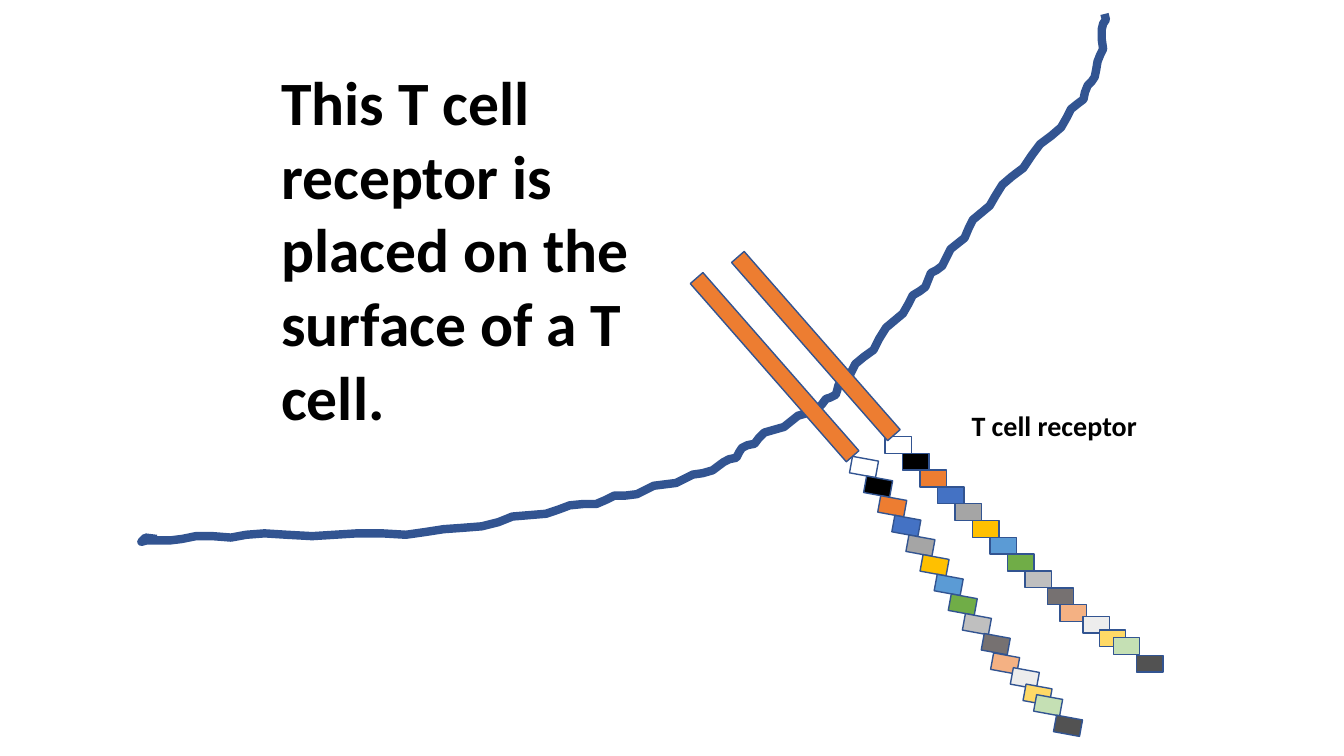
import math

from pptx import Presentation
from pptx import util as u
from pptx.dml.color import RGBColor
from pptx.enum import shapes, text

COLORS = {
    "outline": "325491", "ink": "000000", "white": "FFFFFF", "orange": "ED7D31",
    "blue": "4472C4", "gray": "A5A5A5", "gold": "FFC000", "sky": "5B9BD5",
    "green": "70AD47", "silver": "BFBFBF", "stone": "767171", "peach": "F4B183",
    "mist": "EDEDED", "yellow": "FFD966", "mint": "C5E0B4", "charcoal": "525252",
}
DOMAINS = ["white", "ink", "orange", "blue", "gray", "gold", "sky", "green",
           "silver", "stone", "peach", "mist", "yellow", "mint", "charcoal"]
NUDGES = {"stone": (3.4, 0.2), "mist": (4, -3.5), "yellow": (3, -5.8),
          "mint": (0.5, -12.3), "charcoal": (4.6, -11.7)}
CHAINS = {
    "alpha": {"start": (632.2, 311.8), "step": (12.5, 12), "rotation": 0},
    "beta": {"start": (607.7, 327.6), "step": (10.08, 14.04), "rotation": 10.4},
}
ANCHORS = {"alpha": (498.2, 241.2), "beta": (468.7, 256.3)}
BLOCK_HEIGHT = 12
DOMAIN_WIDTH = 18.9
ANCHOR_WIDTH = 169.2
ANCHOR_ROTATION = 48.8

MEMBRANE_BENDS = [(789, 10), (783, 50), (762, 84), (711, 140), (676, 184),
                  (649, 217), (608, 266), (587, 289), (542, 313), (513, 333),
                  (461, 350), (399, 364), (304, 380), (176, 382), (101, 387)]
MEMBRANE_HOOK = [(104, 384), (112, 385)]
STEPS_PER_BEND = 8
STEPS_PER_RIPPLE = 4
RIPPLE_HEIGHT = 1


def rgb(name):
    """Return the named colour."""
    return RGBColor.from_string(COLORS[name])


def points(lengths):
    """Convert plain numbers to lengths in points."""
    return [u.Pt(length) for length in lengths]


def outline(shape, width):
    """Give a shape the common outline and no shadow."""
    shape.shadow.inherit = False
    shape.line.color.rgb = rgb("outline")
    shape.line.width = u.Pt(width)


def spline(before, start, end, after, t):
    """Return one coordinate of a Catmull-Rom curve from start to end."""
    return 0.5 * (2 * start + (end - before) * t
                  + (2 * before - 5 * start + 4 * end - after) * t ** 2
                  + (3 * start - before - 3 * end + after) * t ** 3)


def membrane_curve():
    """Return a smooth line through the bends, with a small ripple across it."""
    padded = [MEMBRANE_BENDS[0], *MEMBRANE_BENDS, MEMBRANE_BENDS[-1]]
    curve = []
    for bends in zip(padded, padded[1:], padded[2:], padded[3:]):
        xs, ys = zip(*bends)
        for step in range(STEPS_PER_BEND):
            t = step / STEPS_PER_BEND
            ripple = RIPPLE_HEIGHT * math.sin(2 * math.pi * step / STEPS_PER_RIPPLE)
            curve.append((spline(*xs, t) + ripple, spline(*ys, t) + ripple))
    return curve + [MEMBRANE_BENDS[-1]] + MEMBRANE_HOOK


def add_membrane(slide):
    """Draw the cell membrane as one open curve."""
    start, *rest = membrane_curve()
    builder = slide.shapes.build_freeform(*start, scale=u.Pt(1))
    builder.add_line_segments(rest, close=False)
    membrane = builder.convert_to_shape()
    membrane.fill.background()
    outline(membrane, 6)


def add_block(slide, left, top, width, color, rotation):
    """Draw one outlined block of the receptor."""
    block = slide.shapes.add_shape(shapes.MSO_SHAPE.RECTANGLE,
                                   *points((left, top, width, BLOCK_HEIGHT)))
    block.rotation = rotation
    block.fill.solid()
    block.fill.fore_color.rgb = rgb(color)
    outline(block, 1)


def add_chain(slide, start, step, rotation):
    """Draw a chain of evenly stepped domains, nudging those that sit off the line."""
    for index, domain in enumerate(DOMAINS):
        nudge = NUDGES.get(domain, (0, 0))
        left, top = (s + index * d + n for s, d, n in zip(start, step, nudge))
        add_block(slide, left, top, DOMAIN_WIDTH, domain, rotation)


def write_text(holder, box, words, size):
    """Place a text holder and write one bold left-aligned run."""
    holder.left, holder.top, holder.width, holder.height = points(box)
    frame = holder.text_frame
    frame.word_wrap = True
    frame.auto_size = text.MSO_AUTO_SIZE.NONE
    frame.vertical_anchor = text.MSO_ANCHOR.TOP
    paragraph = frame.paragraphs[0]
    paragraph.alignment = text.PP_ALIGN.LEFT
    run = paragraph.add_run()
    run.text = words
    run.font.name = "Calibri"
    run.font.size = u.Pt(size)
    run.font.bold = True
    run.font.color.rgb = rgb("ink")


def main():
    """Build the T cell receptor slide."""
    deck = Presentation()
    deck.slide_width, deck.slide_height = points((960, 540))
    slide = deck.slides.add_slide(deck.slide_layouts[5])
    write_text(slide.shapes.title, (193.7, 41.8, 274.3, 273.6),
               "This T cell receptor is placed on the surface of a T cell.", 44)
    add_membrane(slide)
    for chain in CHAINS.values():
        add_chain(slide, **chain)
    for left, top in ANCHORS.values():
        add_block(slide, left, top, ANCHOR_WIDTH, "orange", ANCHOR_ROTATION)
    label_box = (686.9, 288, 140.4, 31.7)
    receptor_label = slide.shapes.add_textbox(*points(label_box))
    write_text(receptor_label, label_box, "T cell receptor", 20)
    deck.save("out.pptx")


if __name__ == "__main__":
    main()
